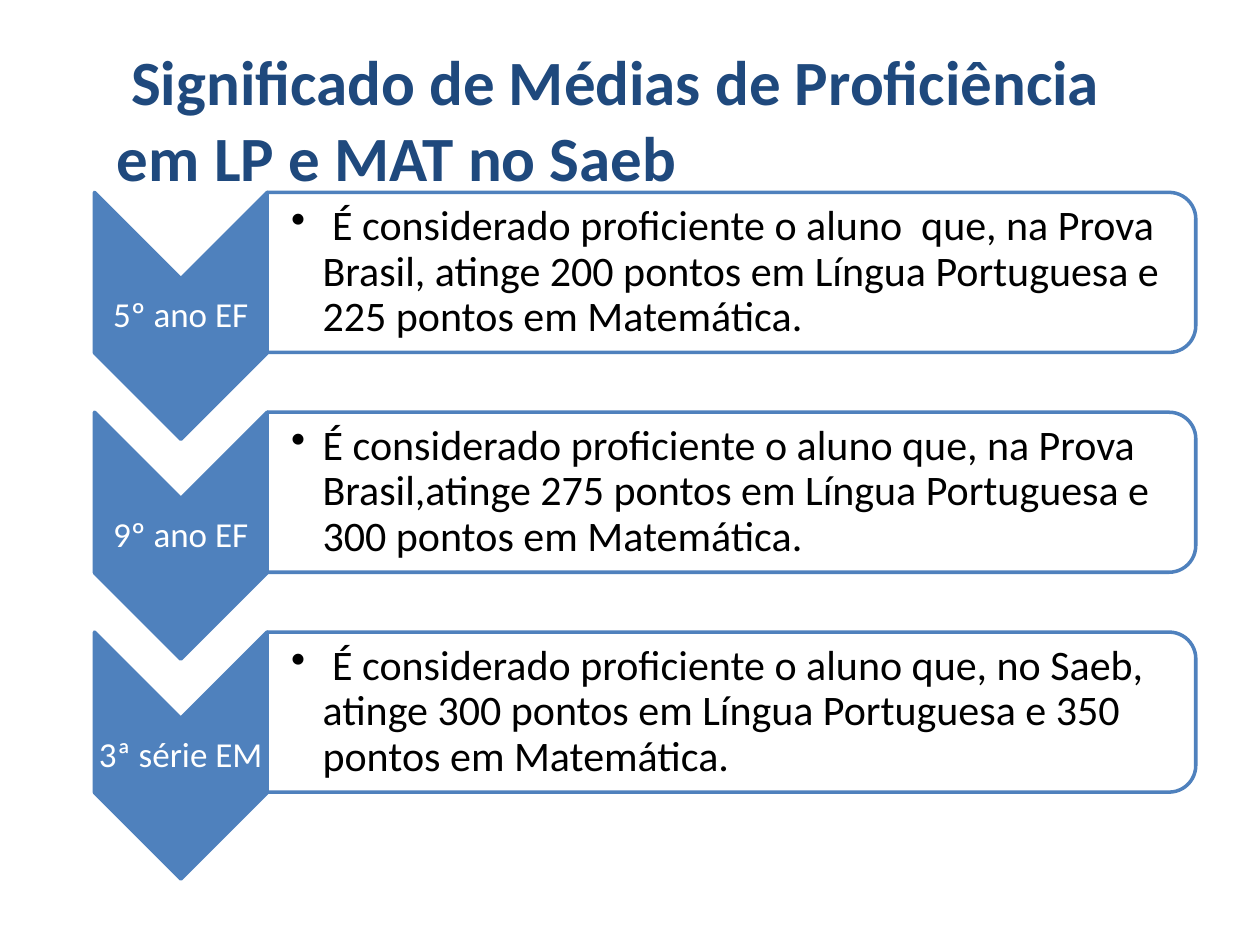
import pptx
import pptx.dml.color
import pptx.enum.shapes
import pptx.enum.text
import pptx.oxml
import pptx.oxml.ns
import pptx.util

COLORS = {"accent": "4F81BD", "title": "1F497D", "white": "FFFFFF",
          "text": "000000"}
FONT = "Calibri"
SHAPE = pptx.enum.shapes.MSO_SHAPE
ALIGN = pptx.enum.text.PP_ALIGN
ANCHOR = pptx.enum.text.MSO_ANCHOR

# The slide is a grid of 100 columns by 75 rows; boxes are
# (left, top, width, height) in grid units.
COLUMNS, ROWS = 100, 75
UNIT = pptx.util.Inches(10) // COLUMNS

TITLE_BOX = (8.3, 2.9, 85.8, 13.1)
LEVELS_BOX = (7.5, 15.27, 87.4, 54.5)
LEVEL_HEIGHT = 19.6
LABEL_WIDTH = 13.7
PANEL_HEIGHT = 12.7

LEVELS = [
    ("5º ano EF", " É considerado proficiente o aluno  que, na Prova Brasil, "
     "atinge 200 pontos em Língua Portuguesa e 225 pontos em Matemática."),
    ("9º ano EF", "É considerado proficiente o aluno que, na Prova "
     "Brasil,atinge 275 pontos em Língua Portuguesa e 300 pontos em "
     "Matemática."),
    ("3ª série EM", " É considerado proficiente o aluno que, no Saeb, "
     "atinge 300 pontos em Língua Portuguesa e 350 pontos em Matemática."),
]


def rgb(name):
    return pptx.dml.color.RGBColor.from_string(COLORS[name])


def grid(box):
    return [round(value * UNIT) for value in box]


def add_turned_shape(s, kind, box, fill):
    """Add a shape turned by 90 degrees that covers the given box."""
    x, y, w, h = box
    sp = s.shapes.add_shape(
        kind, *grid((x + (w - h) / 2, y + (h - w) / 2, h, w)))
    sp.rotation = 90
    sp.shadow.inherit = False
    sp.fill.solid()
    sp.fill.fore_color.rgb = rgb(fill)
    sp.line.color.rgb = rgb("accent")
    sp.line.width = pptx.util.Pt(2)
    return sp


def add_text(s, box, text, size, color, margins=None, anchor=ANCHOR.TOP):
    """Add a wrapped one-paragraph text box and return its paragraph."""
    tf = s.shapes.add_textbox(*grid(box)).text_frame
    tf.word_wrap = True
    tf.vertical_anchor = anchor
    if margins:
        (tf.margin_left, tf.margin_top,
         tf.margin_right, tf.margin_bottom) = grid(margins)
    p = tf.paragraphs[0]
    p.text = text
    font = p.runs[0].font
    font.name = FONT
    font.size = pptx.util.Pt(size)
    font.color.rgb = rgb(color)
    return p


def add_bullet(p):
    pPr = p._p.get_or_add_pPr()
    indent = pptx.util.Inches(0.25)
    pPr.set("marL", str(indent))
    pPr.set("indent", str(-indent))
    pptx.oxml.ns.qn("a:buChar")
    bullet = pptx.oxml.parse_xml(
        f'<a:buChar {pptx.oxml.ns.nsdecls("a")} char="•"/>')
    pPr.append(bullet)


def set_opacity(sp, percent):
    color = sp.fill._xPr.find(".//" + pptx.oxml.ns.qn("a:srgbClr"))
    color.append(pptx.oxml.parse_xml(
        f'<a:alpha {pptx.oxml.ns.nsdecls("a")} val="{percent * 1000}"/>'))


def add_title(s, box):
    p = add_text(s, box,
                 " Significado de Médias de Proficiência em LP e MAT no Saeb",
                 36, "title")
    p.runs[0].font.bold = True


def add_label(s, box, text):
    """Add a downward chevron with its text between notch and point."""
    x, y, w, h = box
    add_turned_shape(s, SHAPE.CHEVRON, box, "accent")
    p = add_text(s, (x, y + w / 2, w, h - w), text, 20, "white",
                 (0.1,) * 4, ANCHOR.MIDDLE)
    p.alignment = ALIGN.CENTER
    p.line_spacing = 0.9


def add_panel(s, box, text):
    """Add a panel rounded on the right with one bulleted paragraph."""
    x, y, w, h = box
    sp = add_turned_shape(s, SHAPE.ROUND_2_SAME_RECTANGLE, box, "white")
    set_opacity(sp, 90)
    inset = 0.6
    p = add_text(s, (x, y + inset, w - inset, h - 2 * inset), text, 24,
                 "text", (1.9, 0.2, 0.2, 0.2), ANCHOR.MIDDLE)
    p.line_spacing = 0.9
    add_bullet(p)


def add_levels(s, box):
    x, y, w, h = box
    pitch = (h - LEVEL_HEIGHT) / (len(LEVELS) - 1)
    for i, (label, description) in enumerate(LEVELS):
        top = y + i * pitch
        add_label(s, (x, top, LABEL_WIDTH, LEVEL_HEIGHT), label)
        add_panel(s, (x + LABEL_WIDTH, top, w - LABEL_WIDTH, PANEL_HEIGHT),
                  description)


def main():
    prs = pptx.Presentation()
    prs.slide_width, prs.slide_height = COLUMNS * UNIT, ROWS * UNIT
    s = prs.slides.add_slide(prs.slide_layouts[6])
    add_levels(s, LEVELS_BOX)
    add_title(s, TITLE_BOX)
    prs.save("out.pptx")


if __name__ == "__main__":
    main()
